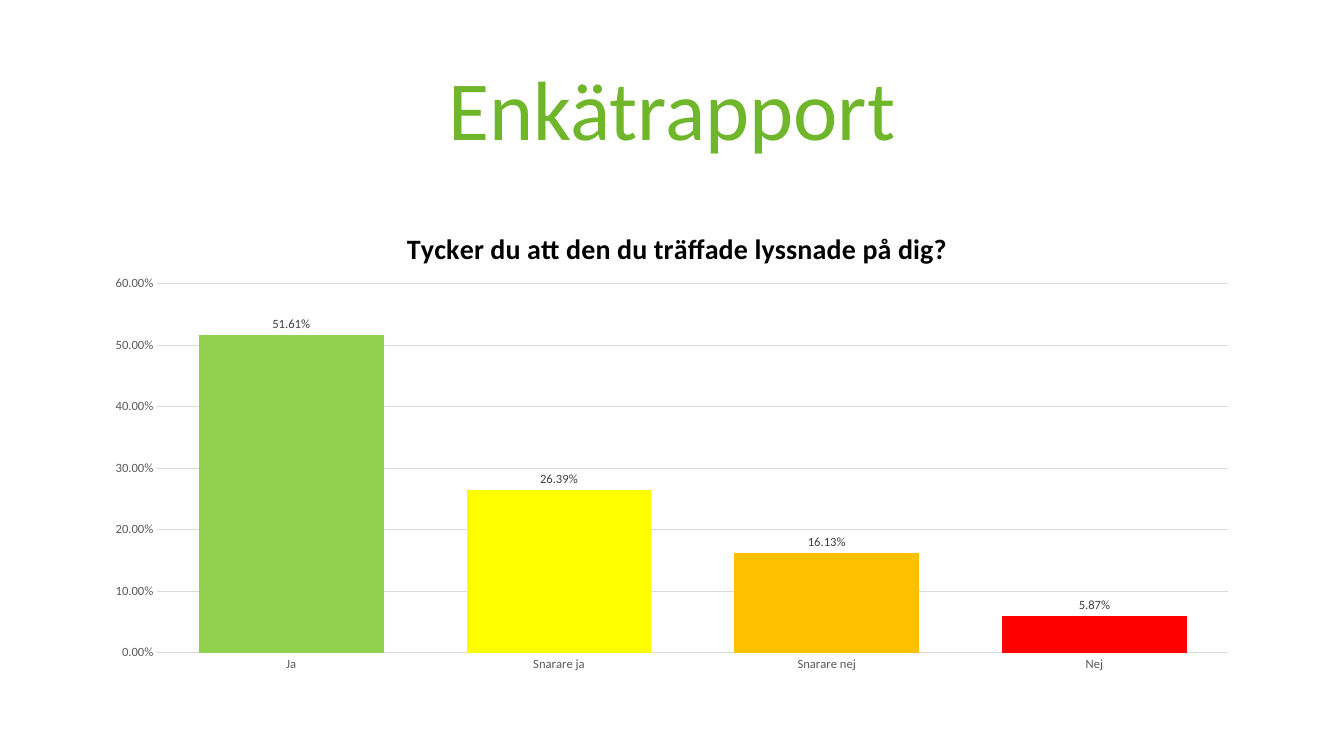
from lxml.etree import SubElement
from pptx import Presentation
from pptx.chart.data import CategoryChartData
from pptx.dml.color import RGBColor
from pptx.enum.chart import XL_CHART_TYPE, XL_LABEL_POSITION, XL_TICK_MARK
from pptx.enum.text import MSO_ANCHOR, PP_ALIGN
from pptx.oxml.ns import qn
from pptx.util import Cm, Pt

GREEN = RGBColor(0x6F, 0xB6, 0x2A)
BLACK = RGBColor(0x00, 0x00, 0x00)
DARK = RGBColor(0x40, 0x40, 0x40)
GREY = RGBColor(0x59, 0x59, 0x59)
PALE = RGBColor(0xD9, 0xD9, 0xD9)
LIME = RGBColor(0x92, 0xD0, 0x50)
YELLOW = RGBColor(0xFF, 0xFF, 0x00)
AMBER = RGBColor(0xFF, 0xC0, 0x00)
RED = RGBColor(0xFF, 0x00, 0x00)

ANSWERS = [
    ("Ja", 0.5161, LIME),
    ("Snarare ja", 0.2639, YELLOW),
    ("Snarare nej", 0.1613, AMBER),
    ("Nej", 0.0587, RED),
]


def place(parent, index, **spots):
    """Give a chart part a fixed layout, in fractions of the chart."""
    for old in parent.findall(qn("c:layout")):
        parent.remove(old)
    layout = SubElement(parent, qn("c:layout"))
    manual = SubElement(layout, qn("c:manualLayout"))
    for tag, val in spots.items():
        SubElement(manual, qn("c:" + tag)).set("val", str(val))
    parent.insert(index, layout)


class Deck:
    face = "Calibri"
    left, width = Cm(2.33), Cm(29.21)

    def __init__(self):
        self.prs = Presentation()
        self.prs.slide_width, self.prs.slide_height = Cm(33.87), Cm(19.05)
        self.slide = self.prs.slides.add_slide(self.prs.slide_layouts[6])

    def style(self, font, size, color, bold=False):
        font.name, font.size, font.bold = self.face, Pt(size), bold
        font.color.rgb = color

    def title(self, text, top, height):
        box = self.slide.shapes.add_textbox(self.left, top, self.width, height)
        frame = box.text_frame
        frame.word_wrap = True
        frame.vertical_anchor = MSO_ANCHOR.MIDDLE
        para = frame.paragraphs[0]
        para.text = text
        para.alignment = PP_ALIGN.CENTER
        para.line_spacing = 0.9
        self.style(para.font, 60, GREEN)

    def axis(self, axis):
        axis.major_tick_mark = axis.minor_tick_mark = XL_TICK_MARK.NONE
        self.style(axis.tick_labels.font, 9, GREY)

    def rule(self, line):
        line.color.rgb = PALE
        line.width = Pt(0.75)

    def chart(self, question, answers, top, height):
        data = CategoryChartData(number_format="0.00%")
        names, shares, fills = zip(*answers)
        data.categories = names
        data.add_series("Series 1", shares)
        chart = self.slide.shapes.add_chart(
            XL_CHART_TYPE.COLUMN_CLUSTERED, self.left, top, self.width, height, data
        ).chart
        self.style(chart.font, 10, BLACK)
        chart.has_legend = False
        self.heading(chart, question)

        cats, vals = chart.category_axis, chart.value_axis
        self.axis(cats)
        self.rule(cats.format.line)
        self.axis(vals)
        vals.format.line.fill.background()
        self.rule(vals.major_gridlines.format.line)
        vals.minimum_scale, vals.maximum_scale, vals.major_unit = 0, 0.6, 0.1
        vals.tick_labels.number_format = "0.00%"
        vals.tick_labels.number_format_is_linked = False
        self.bars(chart.plots[0], fills)
        area = chart.element.find(".//" + qn("c:plotArea"))
        place(area, 0, layoutTarget="inner", xMode="edge", yMode="edge",
              x=0.056, y=0.172, w=0.924, h=0.769)

    def heading(self, chart, text):
        title = chart.chart_title
        para = title.text_frame.paragraphs[0]
        para.text = text
        self.style(para.font, 20, BLACK, True)
        title.include_in_layout = False
        place(title.element if hasattr(title, "element") else title._element, 1,
              xMode="edge", yMode="edge", x=0.267, y=0.048)

    def bars(self, plot, fills):
        plot.gap_width, plot.overlap = 45, -27
        plot.vary_by_categories = False
        plot.has_data_labels = True
        labels = plot.data_labels
        labels.show_value = True
        labels.position = XL_LABEL_POSITION.OUTSIDE_END
        labels.number_format, labels.number_format_is_linked = "0.00%", False
        self.style(labels.font, 9, DARK)
        for i, color in enumerate(fills):
            fill = plot.series[0].points[i].format.fill
            fill.solid()
            fill.fore_color.rgb = color


def main():
    deck = Deck()
    deck.title("Enkätrapport", Cm(1.01), Cm(3.68))
    deck.chart("Tycker du att den du träffade lyssnade på dig?", ANSWERS,
               Cm(5.07), Cm(12.09))
    deck.prs.save("out.pptx")


if __name__ == "__main__":
    main()
